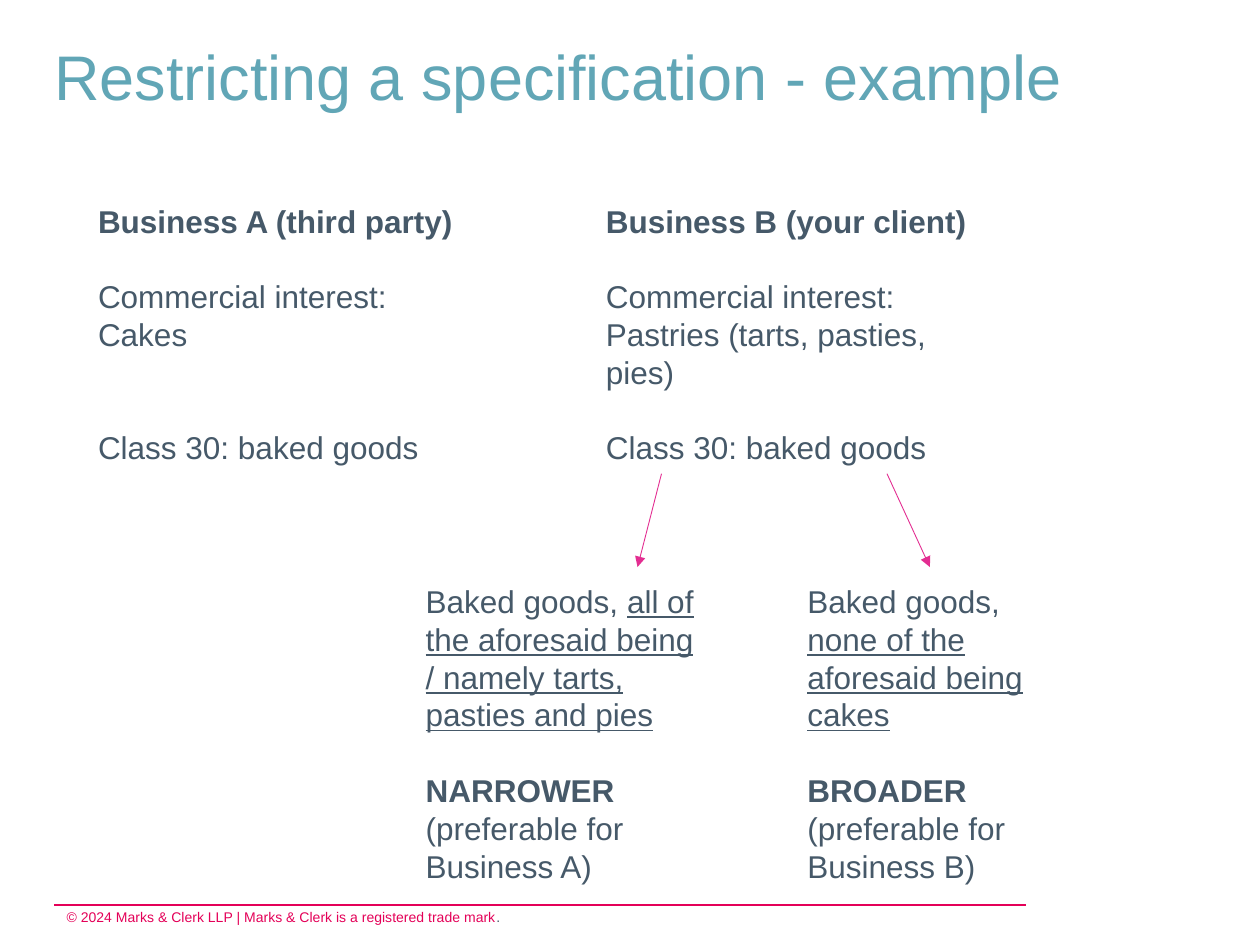
import pptx
import pptx.util
import pptx.dml.color
import pptx.enum.shapes
import pptx.oxml.ns
from lxml import etree
from pptx.util import Inches, Pt

TEAL, SLATE, RED, PINK = "61A6B6", "465969", "E40058", "E32D91"
LINE = 21.6

TITLE = "Restricting a specification - example"
FOOT = [
    ("© 2024 Marks & Clerk LLP | Marks & Clerk is a registered trade mark", RED, ""),
    (".", SLATE, ""),
]


def party(name, goods, gap):
    return [
        (0, [(name, SLATE, "b")]),
        (1, [("Commercial interest: " + goods, SLATE, "")]),
        (gap, [("Class 30: baked goods", SLATE, "")]),
    ]


def option(limit, scope, side):
    return [
        (0, [("Baked goods, ", SLATE, ""), (limit, SLATE, "u")]),
        (1, [(scope, SLATE, "b")]),
        (0, [(f"(preferable for Business {side})", SLATE, "")]),
    ]


BOXES = [
    (0.68, 1.55, 3.16, 2.22, party("Business A (third party)", "Cakes", 2)),
    (4.71, 1.55, 3.31, 2.22,
     party("Business B (your client)", "Pastries (tarts, pasties, pies)", 1)),
    (3.28, 4.57, 2.36, 2.52,
     option("all of the aforesaid being / namely tarts, pasties and pies", "NARROWER", "A")),
    (6.31, 4.57, 2.15, 2.52,
     option("none of the aforesaid being cakes", "BROADER", "B")),
]
ARROWS = [(5.25, 3.76, 5.06, 4.5), (7.04, 3.76, 7.38, 4.5)]


def color(code):
    return pptx.dml.color.RGBColor.from_string(code)


def add_text(slide, left, top, width, height, paras, size=18, inset=True):
    box = slide.shapes.add_textbox(*map(Inches, (left, top, width, height)))
    frame = box.text_frame
    frame.word_wrap = True
    if not inset:
        frame.margin_left = frame.margin_right = 0
        frame.margin_top = frame.margin_bottom = 0
    for i, (gap, runs) in enumerate(paras):
        para = frame.paragraphs[0] if i == 0 else frame.add_paragraph()
        if gap:
            para.space_before = Pt(gap * LINE)
        for words, code, style in runs:
            run = para.add_run()
            run.text = words
            font = run.font
            font.name, font.size = "Arial", Pt(size)
            font.color.rgb = color(code)
            font.bold = "b" in style
            font.underline = "u" in style
    return frame


def add_line(slide, ends, code, width, arrow=False):
    kind = pptx.enum.shapes.MSO_CONNECTOR.STRAIGHT
    line = slide.shapes.add_connector(kind, *map(Inches, ends))
    line.line.color.rgb = color(code)
    line.line.width = Pt(width)
    name = pptx.oxml.ns.qn
    props = line._element.find(name("p:spPr"))
    if arrow:
        etree.SubElement(props.find(name("a:ln")), name("a:tailEnd"), type="triangle")
    etree.SubElement(props, name("a:effectLst"))


def main():
    deck = pptx.Presentation()
    deck.slide_width, deck.slide_height = Inches(10), Inches(7.5)
    slide = deck.slides.add_slide(deck.slide_layouts[6])
    add_line(slide, (0.43, 7.18, 8.14, 7.18), RED, 1.15)
    add_text(slide, 0.43, 7.16, 4.18, 0.24, [(0, FOOT)], 8)
    title = add_text(slide, 0.43, 0.37, 9.57, 0.66,
                     [(0, [(TITLE, TEAL, "")])], 36, False)
    title.paragraphs[0].line_spacing = 0.9
    for box in BOXES:
        add_text(slide, *box)
    for ends in ARROWS:
        add_line(slide, ends, PINK, 0.5, True)
    deck.save("out.pptx")


if __name__ == "__main__":
    main()
